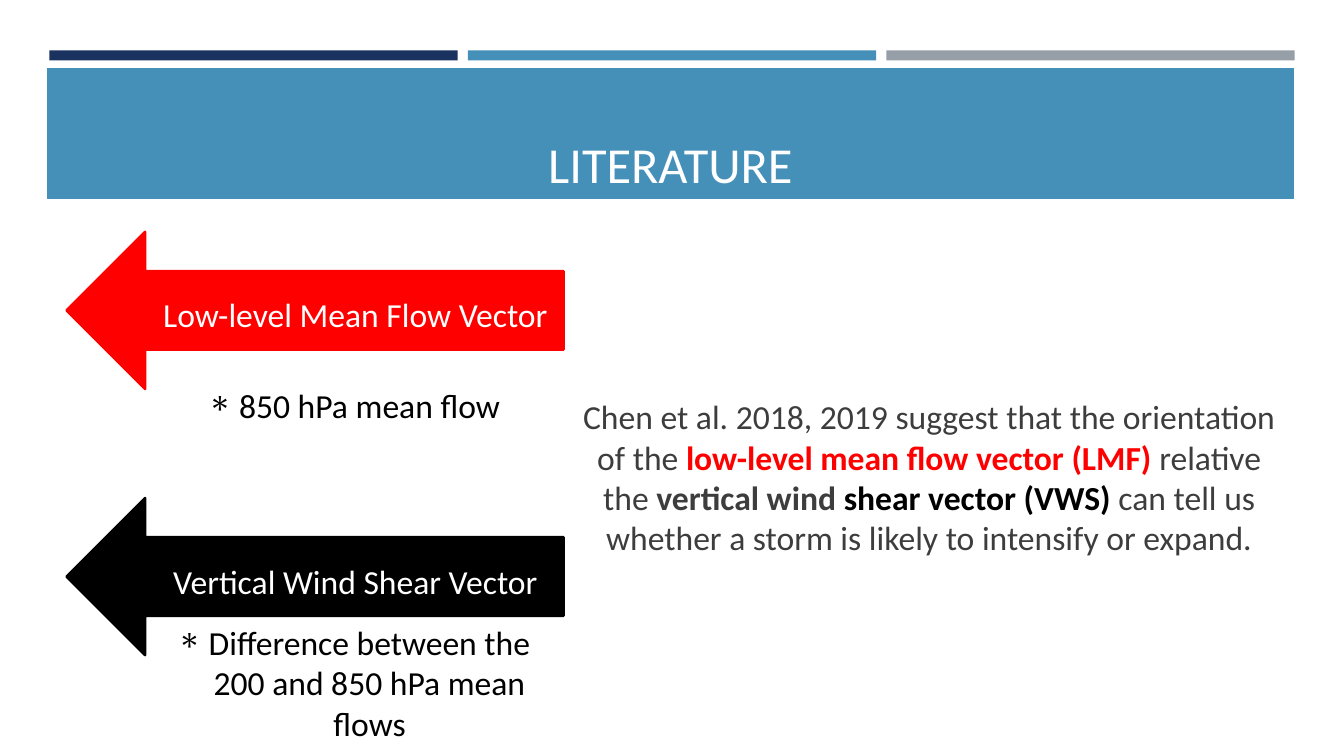
from pptx import Presentation
from pptx.dml.color import RGBColor
from pptx.enum import shapes, text
from pptx.oxml.xmlchemy import OxmlElement
from pptx.util import Inches, Pt

# Content
TITLE = "LITERATURE"
# label, note, arrow colour, arrow top, label top, note top, note height
VECTORS = [
    ("Low-level Mean Flow Vector", "850 hPa mean flow", "red", 2.3, 2.87, 3.77, 0.5),
    ("Vertical Wind Shear Vector",
     "Difference between the 200 and 850 hPa mean flows", "black", 4.94, 5.52, 6.12, 1.31),
]
SUMMARY = [  # text, colour, bold
    ("Chen et al. 2018, 2019 suggest that the orientation of the ", "body", False),
    ("low-level mean flow vector (LMF) ", "red", True),
    ("relative the ", "body", False),
    ("vertical wind ", "body", True),
    ("shear vector (VWS) ", "black", True),
    ("can tell us whether a storm is likely to intensify or expand.", "body", False),
]
THEME = {
    "font": "Calibri", "title_pt": 36, "text_pt": 24,
    "navy": "1A3260", "blue": "4590B8", "gray": "969FA7",
    "red": "FF0000", "black": "000000", "body": "3D3D3D", "white": "FFFFFF",
}


def color(name):
    return RGBColor.from_string(THEME[name])


def style(r, name, size="text_pt", bold=False):
    r.font.name, r.font.size = THEME["font"], Pt(THEME[size])
    r.font.bold, r.font.color.rgb = bold, color(name)


def add_shape(s, kind, box, fill, line_pt=0):
    sp = s.shapes.add_shape(kind, *map(Inches, box))
    sp.shadow.inherit = False
    sp.fill.solid()
    sp.fill.fore_color.rgb = color(fill)
    if line_pt:
        sp.line.color.rgb, sp.line.width = color(fill), Pt(line_pt)
    else:
        sp.line.fill.background()
    return sp


def add_text(s, box, runs, anchor=text.MSO_ANCHOR.TOP):
    tf = s.shapes.add_textbox(*map(Inches, box)).text_frame
    tf.word_wrap, tf.vertical_anchor = True, anchor
    p = tf.paragraphs[0]
    p.alignment = text.PP_ALIGN.CENTER
    for words, name, bold in runs:
        r = p.add_run()
        r.text = words
        style(r, name, bold=bold)
    return p


def add_bullet(p, char, indent):
    pPr = p._p.get_or_add_pPr()
    pPr.set("marL", str(Inches(indent)))
    pPr.set("indent", str(-Inches(indent)))
    bu = OxmlElement("a:buChar")
    bu.set("char", char)
    pPr.append(bu)


def main():
    prs = Presentation()
    prs.slide_width, prs.slide_height = Inches(13.33), Inches(7.5)
    s = prs.slides.add_slide(prs.slide_layouts[5])
    rect = shapes.MSO_SHAPE.RECTANGLE

    # Strips above the title
    for i, name in enumerate(("navy", "blue", "gray")):
        add_shape(s, rect, (0.49 + i * 4.15, 0.5, 4.05, 0.1), name)

    # Title band
    title = s.shapes.title
    title.left, title.top, title.width, title.height = map(Inches, (0.47, 0.68, 12.36, 1.29))
    title.fill.solid()
    title.fill.fore_color.rgb = color("blue")
    title.line.color.rgb, title.line.width = color("blue"), Pt(0.75)
    tf = title.text_frame
    tf.text = TITLE
    tf.vertical_anchor = text.MSO_ANCHOR.BOTTOM
    p = tf.paragraphs[0]
    p.alignment = text.PP_ALIGN.CENTER
    style(p.runs[0], "white", "title_pt")

    # Arrows with their labels and notes
    for label, note, name, arrow_top, label_top, note_top, note_height in VECTORS:
        add_shape(s, shapes.MSO_SHAPE.LEFT_ARROW, (0.66, arrow_top, 4.93, 1.56), name, 1.75)
        add_text(s, (1.47, label_top, 4.11, 0.5), [(label, "white", False)])
        p = add_text(s, (1.44, note_top, 4.14, note_height), [(note, "black", False)])
        add_bullet(p, "∗", 0.31)

    # Summary
    add_text(s, (5.59, 1.96, 7.25, 5.54), SUMMARY, text.MSO_ANCHOR.MIDDLE)

    prs.save("out.pptx")


if __name__ == "__main__":
    main()
